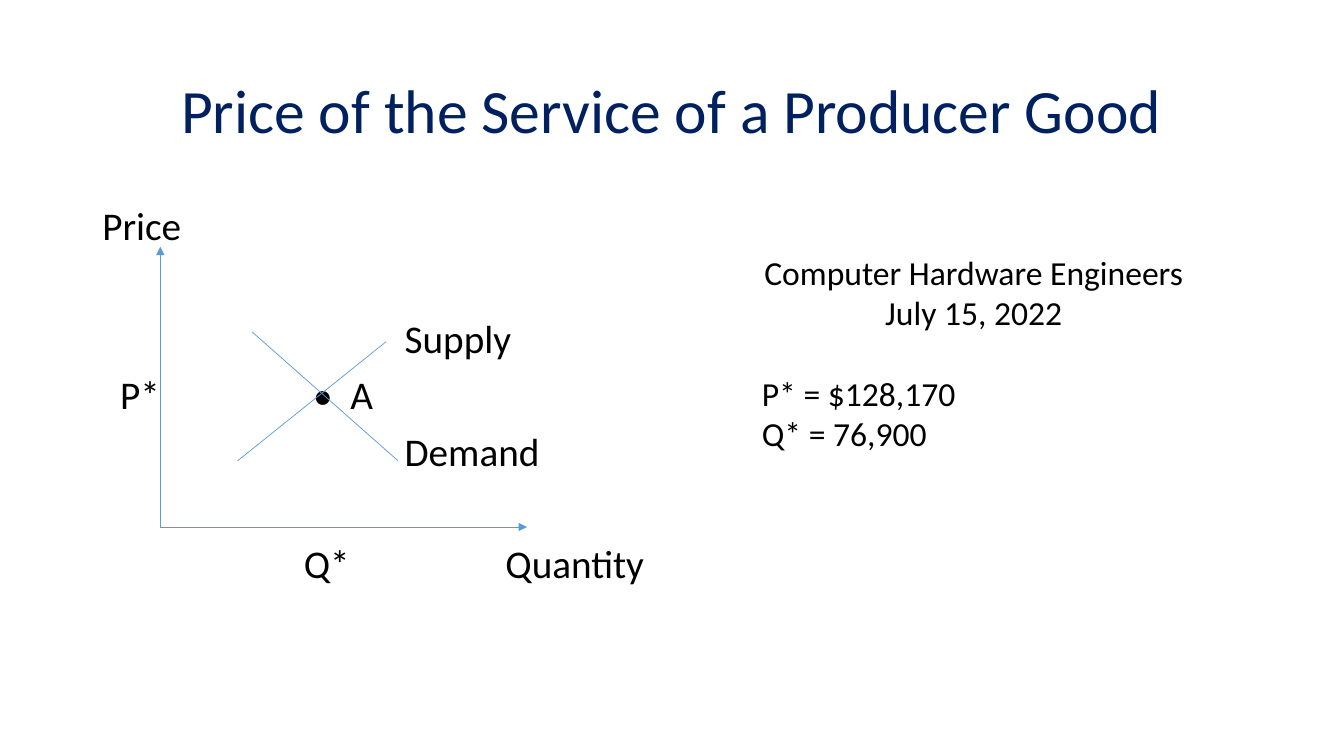
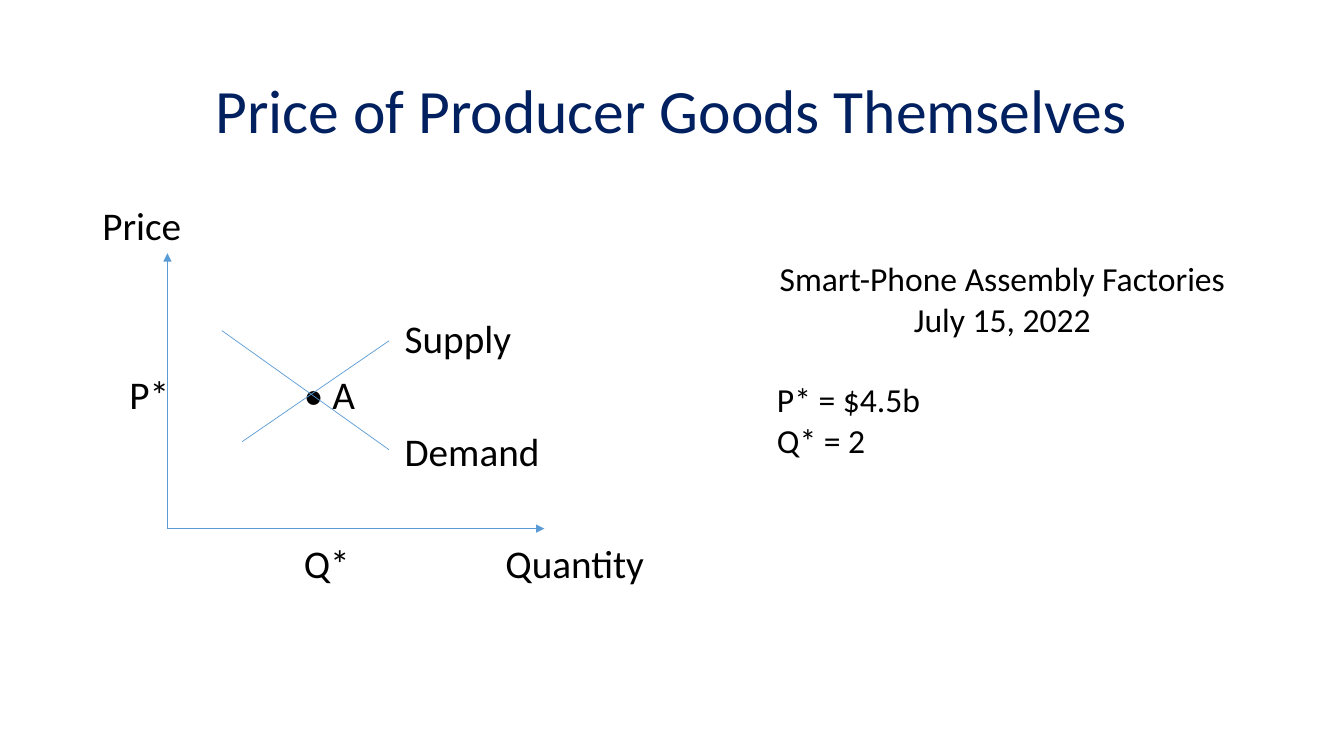
"""Two slides of supply and demand diagrams for producer goods."""
from lxml import etree
from pptx import Presentation
from pptx.dml.color import RGBColor
from pptx.enum.shapes import MSO_CONNECTOR
from pptx.enum.text import MSO_ANCHOR, PP_ALIGN
from pptx.oxml.ns import qn
from pptx.util import Cm, Pt

STRAIGHT = MSO_CONNECTOR.STRAIGHT
MIDDLE = MSO_ANCHOR.MIDDLE
CENTER = PP_ALIGN.CENTER
NAVY = RGBColor(0x00, 0x20, 0x60)
BLACK = RGBColor(0x00, 0x00, 0x00)
BLUE = RGBColor(0x5B, 0x9B, 0xD5)
FONT = "Calibri"
LABEL_TOP = 5.08
ROW_PITCH = 1.42

SHARED_LABELS = [
    ("Price", 2.58, 0),
    ("Supply", 10.2, 2),
    ("Demand", 10.2, 4),
    ("Q*", 7.66, 6),
    ("Quantity", 12.74, 6),
]

SLIDES = [
    {
        "title": "Price of the Service of a Producer Good",
        "labels": [("P*", 3.03, 3), ("•", 7.89, 3), ("A", 8.83, 3)],
        "axes": [(4.04, 13.28, 4.04, 6.22), (4.04, 13.28, 13.28, 13.28)],
        "curves": [(5.99, 11.61, 9.73, 8.61), (6.35, 8.36, 10.03, 11.61)],
        "note_at": (18.95, 6.22, 11.18, 5.38),
        "note": ["Computer Hardware Engineers", "July 15, 2022",
                 "P* = $128,170", "Q* = 76,900"],
    },
    {
        "title": "Price of Producer Goods Themselves",
        "labels": [("P*", 3.26, 3), ("•", 7.66, 3), ("A", 8.38, 3)],
        "axes": [(4.22, 13.32, 4.22, 6.38), (4.22, 13.32, 13.72, 13.32)],
        "curves": [(6.1, 11.13, 9.8, 8.59), (5.59, 8.33, 9.8, 11.33)],
        "note_at": (19.33, 6.38, 11.86, 5.38),
        "note": ["Smart-Phone Assembly Factories", "July 15, 2022",
                 "P* = $4.5b", "Q* = 2"],
    },
]


def add_text(slide, place, text, size, color=BLACK):
    """Add a wrapped text box and return its text frame."""
    frame = slide.shapes.add_textbox(*map(Cm, place)).text_frame
    frame.word_wrap = True
    frame.text = text
    for para in frame.paragraphs:
        para.font.name = FONT
        para.font.size = Pt(size)
        para.font.color.rgb = color
    return frame


def add_line(slide, ends, arrow):
    """Add a thin line, with an arrowhead at its end if wanted."""
    connector = slide.shapes.add_connector(STRAIGHT, *map(Cm, ends))
    connector.line.color.rgb = BLUE
    connector.line.width = Pt(0.5)
    properties = connector._element.spPr
    if arrow:
        etree.SubElement(properties.find(qn("a:ln")), qn("a:tailEnd"), type="triangle")
    etree.SubElement(properties, qn("a:effectLst"))


deck = Presentation()
deck.slide_width = Cm(33.87)
deck.slide_height = Cm(19.05)

for content in SLIDES:
    slide = deck.slides.add_slide(deck.slide_layouts[6])

    title = add_text(slide, (2.33, 1.01, 29.21, 3.68), content["title"], 44, NAVY)
    title.vertical_anchor = MIDDLE
    title.paragraphs[0].alignment = CENTER
    title.paragraphs[0].line_spacing = 0.9

    for text, left, row in SHARED_LABELS + content["labels"]:
        place = (left, LABEL_TOP + row * ROW_PITCH, 4, 1.2)
        label = add_text(slide, place, text, 28)
        label.margin_left = label.margin_right = 0
        label.margin_top = label.margin_bottom = 0

    for ends in content["axes"]:
        add_line(slide, ends, True)
    for ends in content["curves"]:
        add_line(slide, ends, False)

    note = add_text(slide, content["note_at"], "\n".join(content["note"]), 24)
    for para in note.paragraphs[:2]:
        para.alignment = CENTER
    note.paragraphs[2].space_before = Pt(29)

deck.save("out.pptx")
